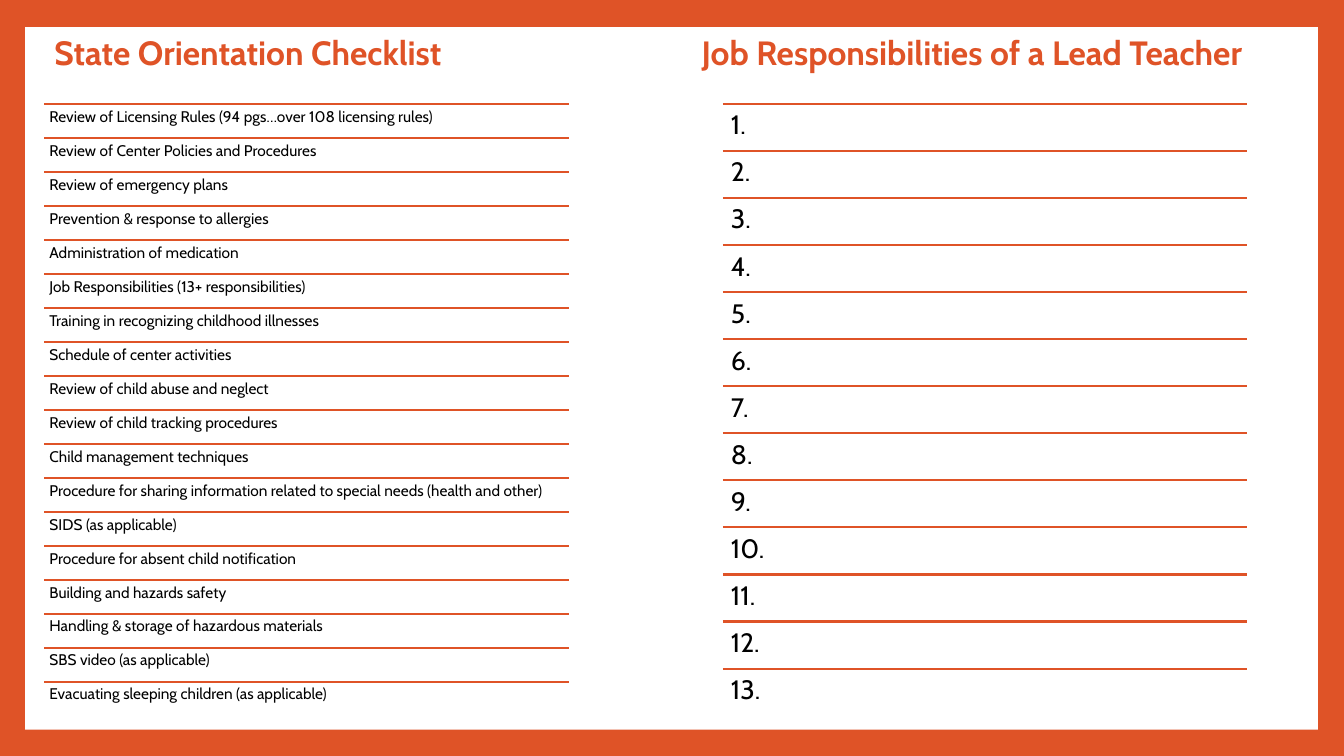
from dataclasses import dataclass

from lxml.etree import SubElement
from pptx import Presentation
from pptx.dml.color import RGBColor
from pptx.enum.shapes import MSO_CONNECTOR, MSO_SHAPE
from pptx.enum.text import MSO_ANCHOR, MSO_AUTO_SIZE, PP_ALIGN
from pptx.oxml.ns import qn
from pptx.slide import Slide
from pptx.util import Inches, Pt

ORANGE = RGBColor(0xDF, 0x53, 0x27)
WHITE = RGBColor(0xFF, 0xFF, 0xFF)
BLACK = RGBColor(0x00, 0x00, 0x00)
FONT = "Cabin"

COLUMN_WIDTH = 5.2
LIST_TOP = 1.03
LIST_HEIGHT = 6.07


@dataclass(frozen=True)
class Column:
    heading: str
    heading_idx: int
    heading_left: float
    heading_width: float
    left: float
    items: list[str]
    size: int
    inset: float


CHECKLIST = Column(
    heading="State Orientation Checklist",
    heading_idx=1,
    heading_left=0.44,
    heading_width=5.2,
    left=0.44,
    items=[
        "Review of Licensing Rules (94 pgs…over 108 licensing rules)",
        "Review of Center Policies and Procedures",
        "Review of emergency plans",
        "Prevention & response to allergies",
        "Administration of medication",
        "Job Responsibilities (13+ responsibilities)",
        "Training in recognizing childhood illnesses",
        "Schedule of center activities",
        "Review of child abuse and neglect",
        "Review of child tracking procedures",
        "Child management techniques",
        "Procedure for sharing information related to special needs (health and other)",
        "SIDS (as applicable)",
        "Procedure for absent child notification",
        "Building and hazards safety",
        "Handling & storage of hazardous materials",
        "SBS video (as applicable)",
        "Evacuating sleeping children (as applicable)",
    ],
    size=11,
    inset=0.05,
)
RESPONSIBILITIES = Column(
    heading="Job Responsibilities of a Lead Teacher",
    heading_idx=3,
    heading_left=6.86,
    heading_width=5.83,
    left=7.17,
    items=[f"{number}." for number in range(1, 14)],
    size=19,
    inset=0.08,
)


def add_panel(slide: Slide) -> None:
    """Set the orange frame and put the white panel behind everything."""
    slide.background.fill.solid()
    slide.background.fill.fore_color.rgb = ORANGE
    panel = slide.shapes.add_shape(
        MSO_SHAPE.RECTANGLE, Inches(0.25), Inches(0.27), Inches(12.82), Inches(6.97)
    )
    panel.shadow.inherit = False
    panel.fill.solid()
    panel.fill.fore_color.rgb = WHITE
    panel.line.fill.background()
    panel.element.getparent().insert(2, panel.element)


def fill_heading(slide: Slide, column: Column) -> None:
    heading = next(
        p for p in slide.placeholders if p.placeholder_format.idx == column.heading_idx
    )
    heading.left, heading.top = Inches(column.heading_left), Inches(0.23)
    heading.width, heading.height = Inches(column.heading_width), Inches(0.63)
    frame = heading.text_frame
    frame.text = column.heading
    frame.auto_size = MSO_AUTO_SIZE.NONE
    frame.vertical_anchor = MSO_ANCHOR.MIDDLE
    paragraph = frame.paragraphs[0]
    paragraph.alignment = PP_ALIGN.LEFT
    paragraph.line_spacing = 0.9
    paragraph.space_before = Pt(0)
    paragraph.font.name = FONT
    paragraph.font.size = Pt(24)
    paragraph.font.bold = True
    paragraph.font.color.rgb = ORANGE


def add_ruled_list(slide: Slide, column: Column) -> None:
    """Draw evenly spaced rows, each with a rule on top."""
    rows = slide.shapes.add_group_shape()
    pitch = LIST_HEIGHT / len(column.items)
    left, width = Inches(column.left), Inches(COLUMN_WIDTH)
    for index, item in enumerate(column.items):
        top = Inches(LIST_TOP + index * pitch)

        rule = rows.shapes.add_connector(
            MSO_CONNECTOR.STRAIGHT, left, top, left + width, top
        )
        rule.line.color.rgb = ORANGE
        rule.line.width = Pt(1.5)
        SubElement(rule.element.spPr, qn("a:effectLst"))

        entry = rows.shapes.add_textbox(left, top, width, Inches(pitch))
        frame = entry.text_frame
        frame.word_wrap = True
        frame.margin_left = frame.margin_right = Inches(column.inset)
        frame.margin_top = frame.margin_bottom = Inches(column.inset)
        frame.text = item
        paragraph = frame.paragraphs[0]
        paragraph.line_spacing = 0.9
        paragraph.font.name = FONT
        paragraph.font.size = Pt(column.size)
        paragraph.font.color.rgb = BLACK


def main() -> None:
    deck = Presentation()
    deck.slide_width, deck.slide_height = Inches(13.33), Inches(7.5)
    slide = deck.slides.add_slide(deck.slide_layouts.get_by_name("Comparison"))

    add_panel(slide)
    for column in (CHECKLIST, RESPONSIBILITIES):
        fill_heading(slide, column)
        add_ruled_list(slide, column)

    # Unused placeholders of the layout
    for placeholder in list(slide.placeholders):
        if not placeholder.text_frame.text:
            placeholder.element.getparent().remove(placeholder.element)

    deck.save("out.pptx")


if __name__ == "__main__":
    main()
